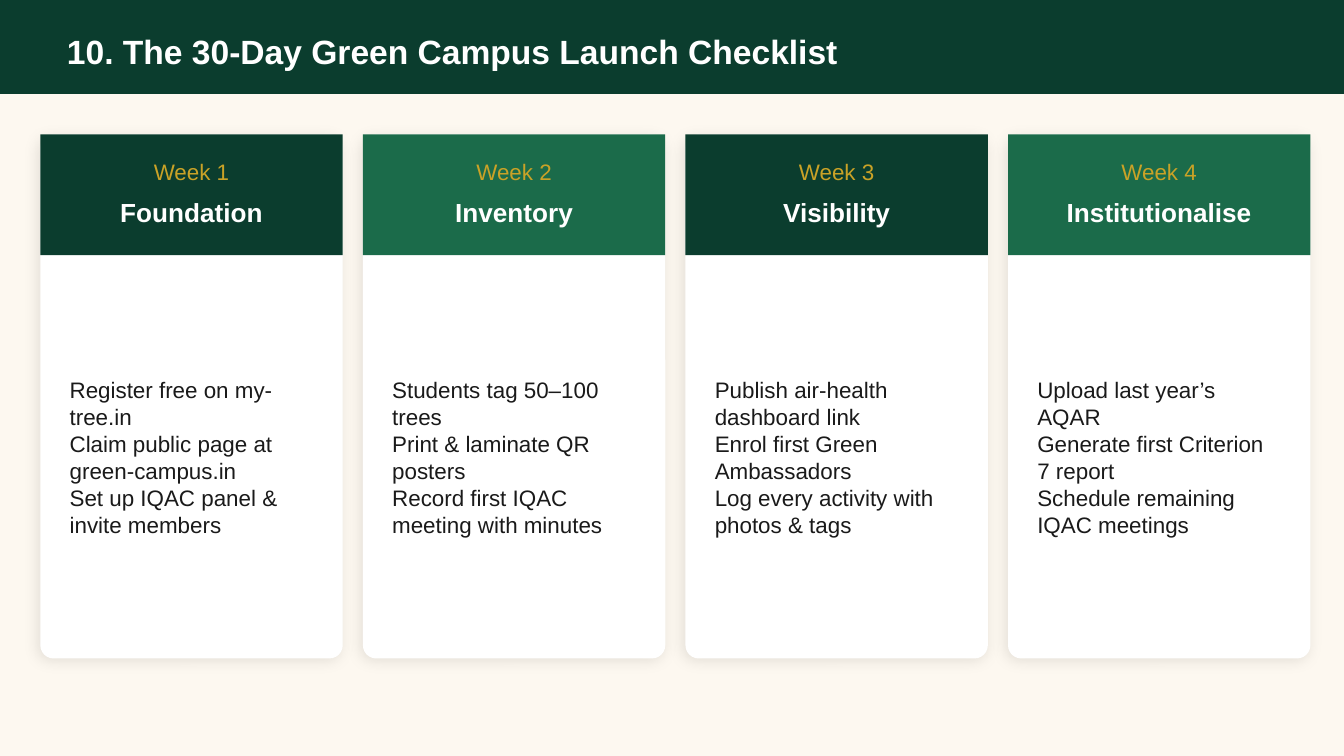
from dataclasses import dataclass

from lxml.etree import SubElement
from pptx import Presentation
from pptx.dml.color import RGBColor
from pptx.enum.shapes import MSO_SHAPE as Preset
from pptx.enum.text import MSO_ANCHOR as Anchor, PP_ALIGN as Align
from pptx.oxml.ns import qn
from pptx.shapes.autoshape import Shape
from pptx.slide import Slide
from pptx.util import Emu, Pt

PX = 4572
SLIDE_WIDTH, SLIDE_HEIGHT = 2000, 1125
CARD_LEFT, CARD_TOP, CARD_WIDTH, CARD_HEIGHT = 60, 200, 450, 780
CARD_PITCH = 480
CORNER_RATIO = 0.044


@dataclass(frozen=True)
class Theme:
    font: str = "Arial"
    cream: str = "FDF8F0"
    forest: str = "0B3D2E"
    leaf: str = "1B6B4A"
    gold: str = "C9A227"
    white: str = "FFFFFF"
    ink: str = "1A1A1A"
    shadow: str = "000000"
    title_size: int = 18
    heading_size: int = 14
    body_size: int = 12


@dataclass(frozen=True)
class Box:
    left: int
    top: int
    width: int
    height: int

    def emu(self) -> tuple[Emu, ...]:
        return tuple(Emu(px * PX) for px in (self.left, self.top, self.width, self.height))


@dataclass(frozen=True)
class TextStyle:
    size: int
    color: str
    bold: bool = False
    align: Align = Align.LEFT


@dataclass(frozen=True)
class Week:
    label: str
    focus: str
    tasks: tuple[str, ...]


THEME = Theme()
TITLE = TextStyle(THEME.title_size, THEME.white, bold=True)
WEEK_LABEL = TextStyle(THEME.body_size, THEME.gold, align=Align.CENTER)
FOCUS = TextStyle(THEME.heading_size, THEME.white, bold=True, align=Align.CENTER)
TASKS = TextStyle(THEME.body_size, THEME.ink)

WEEKS = (
    Week("Week 1", "Foundation", (
        "Register free on my-tree.in",
        "Claim public page at green-campus.in",
        "Set up IQAC panel & invite members",
    )),
    Week("Week 2", "Inventory", (
        "Students tag 50–100 trees",
        "Print & laminate QR posters",
        "Record first IQAC meeting with minutes",
    )),
    Week("Week 3", "Visibility", (
        "Publish air-health dashboard link",
        "Enrol first Green Ambassadors",
        "Log every activity with photos & tags",
    )),
    Week("Week 4", "Institutionalise", (
        "Upload last year’s AQAR",
        "Generate first Criterion 7 report",
        "Schedule remaining IQAC meetings",
    )),
)


def add_panel(slide: Slide, box: Box, color: str, preset: Preset = Preset.RECTANGLE) -> Shape:
    panel = slide.shapes.add_shape(preset, *box.emu())
    panel.shadow.inherit = False
    panel.fill.solid()
    panel.fill.fore_color.rgb = RGBColor.from_string(color)
    panel.line.fill.background()
    return panel


def add_soft_shadow(panel: Shape) -> None:
    effects = panel._element.spPr.find(qn("a:effectLst"))
    shadow = SubElement(effects, qn("a:outerShdw"), {
        "blurRad": str(Pt(8)),
        "dist": str(Pt(2)),
        "dir": str(135 * 60000),
        "algn": "bl",
        "rotWithShape": "0",
    })
    tint = SubElement(shadow, qn("a:srgbClr"), val=THEME.shadow)
    SubElement(tint, qn("a:alpha"), val="10000")


def add_text(slide: Slide, box: Box, lines: tuple[str, ...], style: TextStyle) -> None:
    frame = slide.shapes.add_textbox(*box.emu()).text_frame
    frame.word_wrap = True
    frame.vertical_anchor = Anchor.MIDDLE
    frame.text = "\n".join(lines)
    font_format = {"name": THEME.font, "size": Pt(style.size), "bold": style.bold}
    for paragraph in frame.paragraphs:
        paragraph.alignment = style.align
        for run in paragraph.runs:
            for attribute, value in font_format.items():
                setattr(run.font, attribute, value)
            run.font.color.rgb = RGBColor.from_string(style.color)


def add_week_card(slide: Slide, week: Week, left: int, banner_color: str) -> None:
    card = add_panel(slide, Box(left, CARD_TOP, CARD_WIDTH, CARD_HEIGHT),
                     THEME.white, Preset.ROUNDED_RECTANGLE)
    card.adjustments[0] = CORNER_RATIO
    add_soft_shadow(card)
    add_panel(slide, Box(left, CARD_TOP, CARD_WIDTH, 180), banner_color)
    add_text(slide, Box(left, CARD_TOP + 20, CARD_WIDTH, 70), (week.label,), WEEK_LABEL)
    add_text(slide, Box(left, CARD_TOP + 80, CARD_WIDTH, 70), (week.focus,), FOCUS)
    add_text(slide, Box(left + 24, CARD_TOP + 230, 400, 500), week.tasks, TASKS)


def main() -> None:
    deck = Presentation()
    deck.slide_width = Emu(SLIDE_WIDTH * PX)
    deck.slide_height = Emu(SLIDE_HEIGHT * PX)
    slide = deck.slides.add_slide(deck.slide_layouts[6])
    slide.background.fill.solid()
    slide.background.fill.fore_color.rgb = RGBColor.from_string(THEME.cream)

    add_panel(slide, Box(0, 0, SLIDE_WIDTH, 140), THEME.forest)
    add_text(slide, Box(80, 36, 1800, 80),
             ("10. The 30-Day Green Campus Launch Checklist",), TITLE)

    banner_colors = (THEME.forest, THEME.leaf)
    for index, week in enumerate(WEEKS):
        add_week_card(slide, week, CARD_LEFT + index * CARD_PITCH, banner_colors[index % 2])

    deck.save("out.pptx")


if __name__ == "__main__":
    main()
